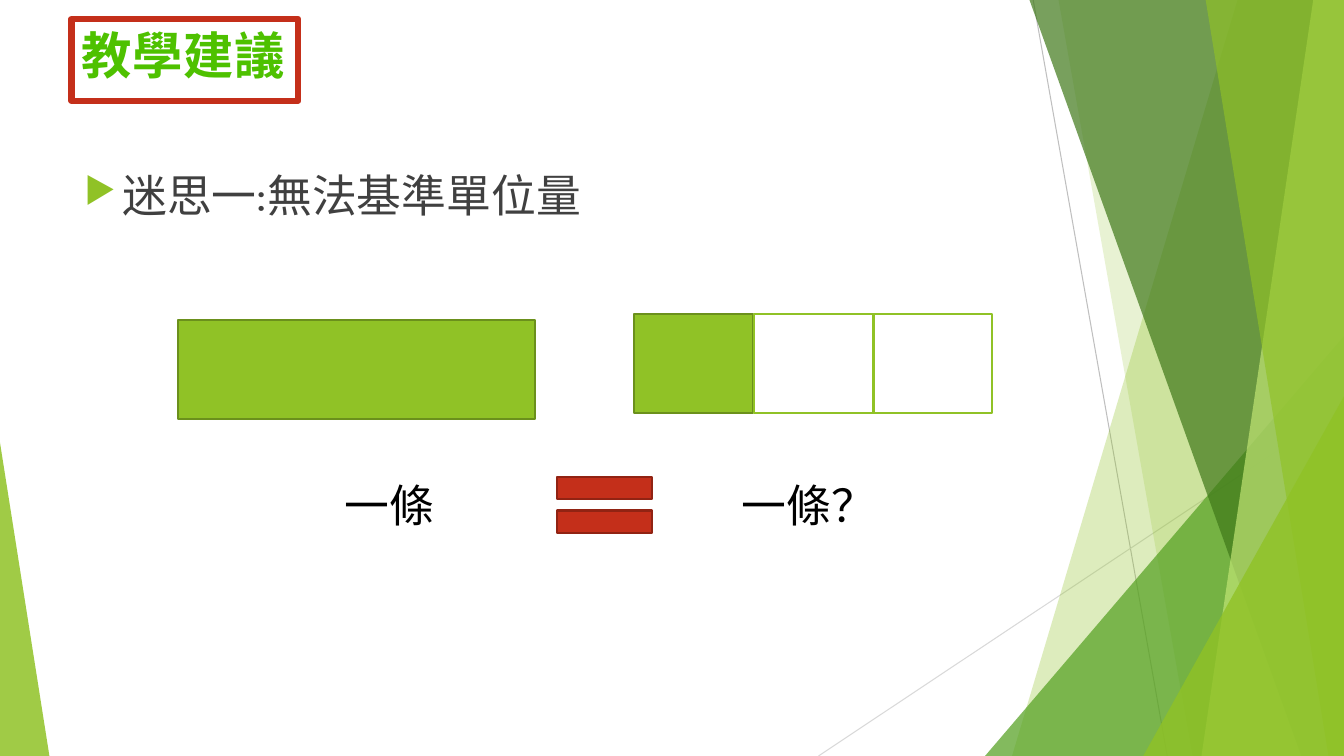
from lxml.etree import SubElement
from pptx import Presentation
from pptx.dml.color import RGBColor
from pptx.enum.shapes import MSO_CONNECTOR, MSO_SHAPE
from pptx.enum.text import MSO_ANCHOR, PP_ALIGN
from pptx.oxml.ns import qn
from pptx.util import Pt

# Content
TITLE = "教學建議"
POINT = "迷思一:無法基準單位量"
LABELS = [("一條", 239, 79.2), ("一條？", 522.7, 111.6)]  # text, left, width

# Palette and sizes, in points
W, H = 960, 540
GREEN, DARK_GREEN = "90C226", "6B901C"
RED, DARK_RED = "C42F1A", "912313"
WHITE = "FFFFFF"
TOP = -0.72

# Background, from back to front
RAYS = [((738, 0), (833.76, H), "BFBFBF"), ((W, 290.16), (584.64, H), "D9D9D9")]
# Bands run to the right edge: left x at top, left x at bottom, colour, opacity
# Triangles: left, top, width, apex, colour, opacity
DECOR = [
    ("band", (884.16, 722.88), GREEN, 30),
    ("band", (756, 851.76), GREEN, 20),
    ("triangle", (703.6, 240, 256.4, 1), "54A021", 72),
    ("band", (735.12, 929.52), "3F7819", 70),
    ("band", (938.16, 858.24), "C0E474", 70),
    ("band", (861.12, 948.96), GREEN, 65),
    ("triangle", (816.6, 283, 143.4, 1), GREEN, 80),
    ("triangle", (0, 316.2, 35.3, 0), GREEN, 85),
]

# Fraction bars
WHOLE_BAR = (127.4, 228.5, 255, 70.6)
PART_LEFT, PART_TOP, PART_W, PART_H, PART_STEP = 452.9, 224.3, 85, 70.6, 85.5
PARTS = [(GREEN, DARK_GREEN), (WHITE, GREEN), (WHITE, GREEN)]

prs = Presentation()
prs.slide_width, prs.slide_height = Pt(W), Pt(H)
s = prs.slides.add_slide(prs.slide_layouts[6])


def rgb(value):
    return RGBColor.from_string(value)


def paint(sp, fill, line=None, width=1.5, opacity=100):
    sp.shadow.inherit = False
    sp.fill.solid()
    sp.fill.fore_color.rgb = rgb(fill)
    if opacity < 100:
        color = sp.fill._xPr.find(qn("a:solidFill"))[0]
        SubElement(color, qn("a:alpha"), val=str(opacity * 1000))
    if line:
        sp.line.color.rgb = rgb(line)
        sp.line.width = Pt(width)
    else:
        sp.line.fill.background()


def add_shape(kind, box, fill, line=None, width=1.5, opacity=100, parent=s):
    sp = parent.shapes.add_shape(kind, *map(Pt, box))
    paint(sp, fill, line, width, opacity)
    return sp


def write(tf, text, size, font, color, bold=False):
    tf.vertical_anchor = MSO_ANCHOR.TOP
    p = tf.paragraphs[0]
    p.alignment = PP_ALIGN.LEFT
    r = p.add_run()
    r.text = text
    r.font.size, r.font.name, r.font.bold = Pt(size), font, bold
    r.font.color.rgb = rgb(color)
    return p


# Background rays, bands and triangles
for start, end, color in RAYS:
    ray = s.shapes.add_connector(MSO_CONNECTOR.STRAIGHT, *map(Pt, start + end))
    ray.line.color.rgb = rgb(color)
    ray.line.width = Pt(0.75)
    SubElement(ray._element.spPr, qn("a:effectLst"))

for kind, place, color, opacity in DECOR:
    if kind == "band":
        top_x, bottom_x = place
        outline = s.shapes.build_freeform(Pt(top_x), Pt(TOP))
        corners = [(W, TOP), (W, H), (bottom_x, H)]
        outline.add_line_segments([(Pt(x), Pt(y)) for x, y in corners])
        paint(outline.convert_to_shape(), color, opacity=opacity)
    else:
        left, top, width, apex = place
        sp = add_shape(MSO_SHAPE.ISOSCELES_TRIANGLE, (left, top, width, H - top),
                       color, opacity=opacity)
        sp.adjustments[0] = apex

# Title
title = add_shape(MSO_SHAPE.RECTANGLE, (51, 13.6, 162, 58.4), WHITE, RED, 4.5)
p = write(title.text_frame, TITLE, 36, "Noto Sans Mono", "4EC100", True)
p.runs[0].font._element.set("spc", "50")

# Bulleted point
body = s.shapes.add_textbox(Pt(53.3), Pt(116.6), Pt(676.8), Pt(358.6))
body.text_frame.word_wrap = True
p = write(body.text_frame, POINT, 32, "Karla", "404040")
p.space_before = Pt(10)
pPr = p._p.get_or_add_pPr()
pPr.set("marL", str(Pt(27)))
pPr.set("indent", str(-Pt(27)))
SubElement(SubElement(pPr, qn("a:buClr")), qn("a:srgbClr"), val=GREEN)
SubElement(pPr, qn("a:buSzPct"), val="80000")
SubElement(pPr, qn("a:buChar"), char="▶")

# One whole bar beside one bar cut in thirds
add_shape(MSO_SHAPE.RECTANGLE, WHOLE_BAR, GREEN, DARK_GREEN)
thirds = s.shapes.add_group_shape()
for i, (fill, line) in enumerate(PARTS):
    box = (PART_LEFT + i * PART_STEP, PART_TOP, PART_W, PART_H)
    add_shape(MSO_SHAPE.RECTANGLE, box, fill, line, parent=thirds)

# Labels and equal sign
for text, left, width in LABELS:
    label = s.shapes.add_textbox(Pt(left), Pt(337.7), Pt(width), Pt(46))
    label.text_frame.word_wrap = False
    write(label.text_frame, text, 32, "Karla", "000000")
add_shape(MSO_SHAPE.MATH_EQUAL, (385.9, 326.9, 92.2, 67.7), RED, DARK_RED)

prs.save("out.pptx")
